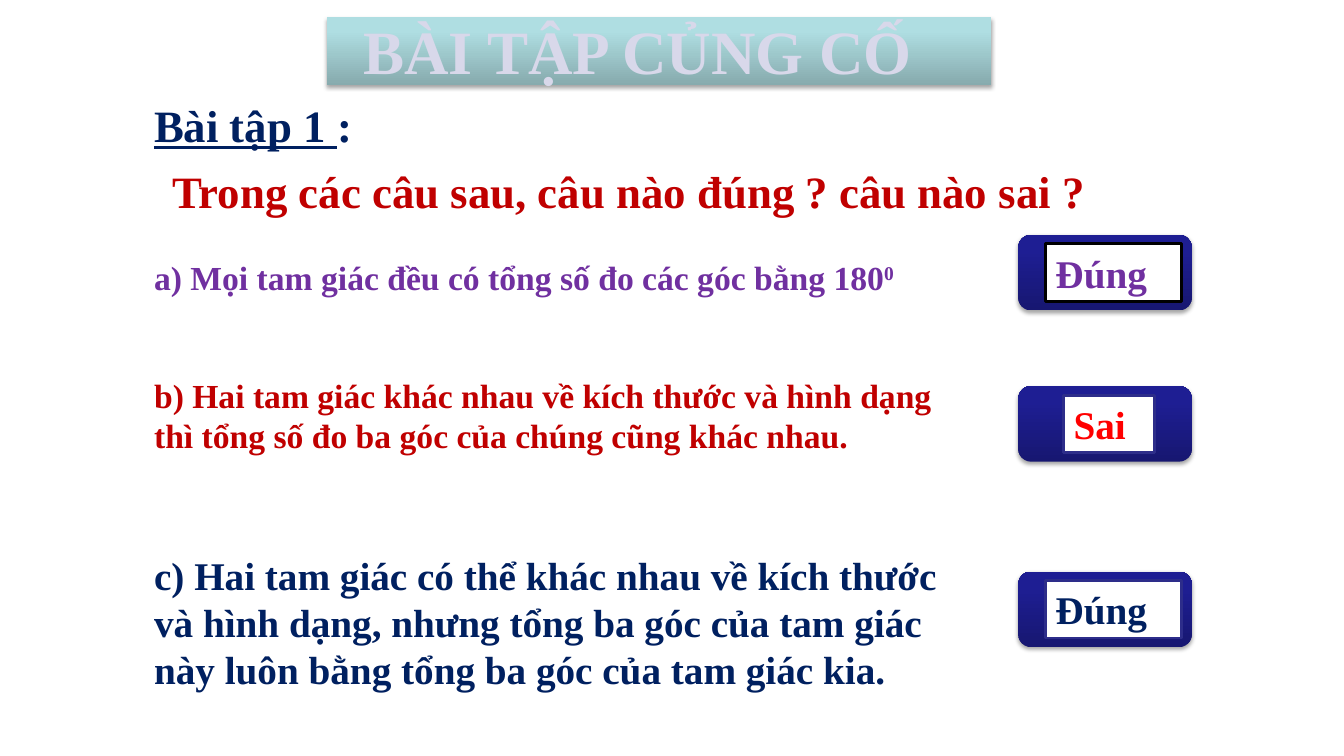
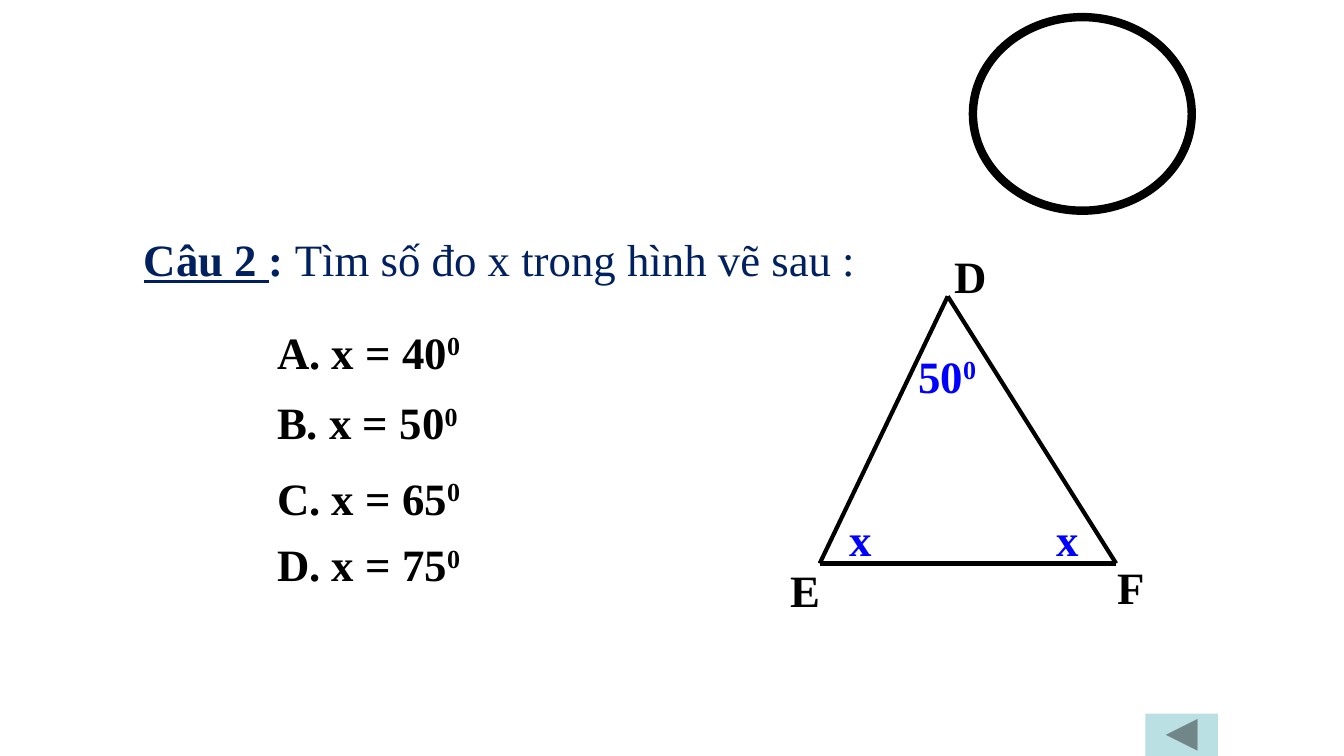
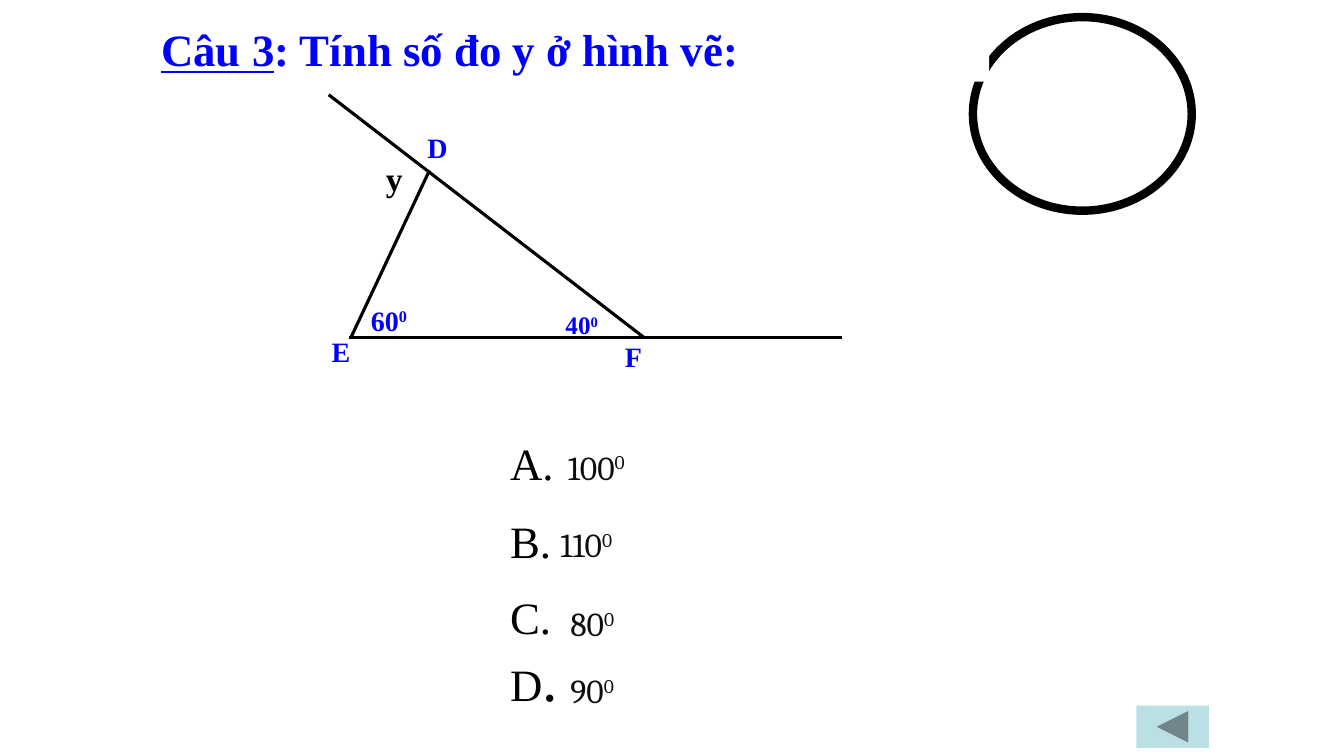
from dataclasses import dataclass

from lxml import etree
from pptx import Presentation
from pptx.dml.color import RGBColor
from pptx.enum.shapes import MSO_CONNECTOR, MSO_SHAPE
from pptx.enum.text import MSO_ANCHOR, MSO_AUTO_SIZE, PP_ALIGN
from pptx.oxml.ns import qn
from pptx.util import Inches, Pt

RECT = MSO_SHAPE.RECTANGLE
ROUND = MSO_SHAPE.ROUNDED_RECTANGLE
OVAL = MSO_SHAPE.OVAL
BACK = MSO_SHAPE.ACTION_BUTTON_BACK_OR_PREVIOUS
STRAIGHT = MSO_CONNECTOR.STRAIGHT
LEFT, CENTER = PP_ALIGN.LEFT, PP_ALIGN.CENTER
TOP = MSO_ANCHOR.TOP
GROW = MSO_AUTO_SIZE.SHAPE_TO_FIT_TEXT

SERIF, BOOK = "Times New Roman", "Cambria"
COLORS = {
    "white": "FFFFFF", "black": "000000", "ink": "0D0D0D", "navy": "002060",
    "crimson": "C00000", "red": "FF0000", "purple": "7030A0", "blue": "0000FF",
    "indigo": "2D2D8A", "pale": "D8D8EA", "aqua": "BBE0E3",
    "teal_low": "87ABAE", "teal_top": "AFDEE2",
    "plate_low": "171771", "plate_top": "1E1E93",
}


@dataclass(frozen=True)
class Bit:
    text: str
    up: bool = False
    under: bool = False
    bold: bool | None = None
    size: float | None = None


@dataclass(frozen=True)
class Box:
    x: float
    y: float
    w: float
    h: float


@dataclass(frozen=True)
class Label:
    box: Box
    bits: tuple[Bit, ...]
    size: float = 32
    color: str = "black"
    bold: bool = True
    face: str = SERIF
    align: PP_ALIGN = LEFT
    wrap: bool = True


@dataclass(frozen=True)
class Answer:
    y: float
    text: str
    color: str
    edge: str
    x: float
    w: float


def tint(name: str) -> RGBColor:
    return RGBColor.from_string(COLORS[name])


def plain(text: str) -> tuple[Bit, ...]:
    return (Bit(text),)


def power(text: str) -> tuple[Bit, ...]:
    return (Bit(text), Bit("0", up=True))


def spread(box: Box) -> list[Inches]:
    return [Inches(v) for v in (box.x, box.y, box.w, box.h)]


def write(shape, label: Label) -> None:
    frame = shape.text_frame
    frame.word_wrap = label.wrap
    frame.auto_size = GROW
    frame.vertical_anchor = TOP
    para = frame.paragraphs[0]
    para.alignment = label.align
    for bit in label.bits:
        run = para.add_run()
        run.text = bit.text
        font = run.font
        font.name = label.face
        font.size = Pt(bit.size or label.size)
        font.bold = label.bold if bit.bold is None else bit.bold
        font.underline = bit.under
        font.color.rgb = tint(label.color)
        if bit.up:
            run._r.get_or_add_rPr().set("baseline", "30000")


def note(slide, label: Label) -> None:
    write(slide.shapes.add_textbox(*spread(label.box)), label)


def block(slide, kind: MSO_SHAPE, box: Box, fill: str,
          edge: str | None = None, width: float = 1):
    shape = slide.shapes.add_shape(kind, *spread(box))
    shape.shadow.inherit = False
    shape.fill.solid()
    shape.fill.fore_color.rgb = tint(fill)
    if edge:
        shape.line.color.rgb = tint(edge)
        shape.line.width = Pt(width)
    else:
        shape.line.fill.background()
    return shape


def plate(slide, kind: MSO_SHAPE, box: Box, low: str, high: str) -> None:
    shape = block(slide, kind, box, low)
    shape.fill.gradient()
    shape.fill.gradient_angle = 90
    for stop, name, spot in zip(shape.fill.gradient_stops, (low, high), (0, 0.8)):
        stop.color.rgb = tint(name)
        stop.position = spot
    glow = shape._element.spPr.find(qn("a:effectLst"))
    cast = etree.SubElement(glow, qn("a:outerShdw"), blurRad=str(Pt(3.1)),
                            dist=str(Pt(1.8)), dir="5400000", rotWithShape="0")
    shade = etree.SubElement(cast, qn("a:srgbClr"), val=COLORS["black"])
    etree.SubElement(shade, qn("a:alpha"), val="35000")


def stroke(slide, start: tuple[float, float], end: tuple[float, float],
           width: float) -> None:
    line = slide.shapes.add_connector(
        STRAIGHT, *[Inches(v) for v in (*start, *end)])
    line.line.color.rgb = tint("black")
    line.line.width = Pt(width)
    etree.SubElement(line._element.spPr, qn("a:effectLst"))


def ring(slide) -> None:
    block(slide, OVAL, Box(9.65, 0.17, 2.17, 1.92), "white", "black", 6)


def button(slide, x: float, y: float) -> None:
    block(slide, BACK, Box(x, y, 0.72, 0.42), "aqua")


def review(slide) -> None:
    plate(slide, RECT, Box(3.24, 0.17, 6.59, 0.67), "teal_low", "teal_top")
    labels = (
        Label(Box(3.48, 0.08, 5.69, 0.84), plain("BÀI TẬP CỦNG CỐ"), 44, "pale",
              align=CENTER, wrap=False),
        Label(Box(1.43, 0.92, 2.35, 0.64),
              (Bit("Bài tập 1 ", under=True), Bit(":")), color="navy"),
        Label(Box(1.61, 1.58, 10.11, 0.64),
              plain("Trong các câu sau, câu nào đúng ? câu nào sai ?"),
              color="crimson"),
        Label(Box(1.43, 2.5, 8.4, 0.51),
              power("a) Mọi tam giác đều có tổng số đo các góc bằng 180"),
              24, "purple"),
        Label(Box(1.43, 3.67, 8.12, 0.91),
              plain("b) Hai tam giác khác nhau về kích thước và hình dạng "
                    "thì tổng số đo ba góc của chúng cũng khác nhau."),
              24, "crimson"),
        Label(Box(1.43, 5.42, 8.31, 1.51),
              plain("c) Hai tam giác có thể khác nhau về kích thước và hình "
                    "dạng, nhưng tổng ba góc của tam giác này luôn bằng tổng "
                    "ba góc của tam giác kia."),
              28, "navy"),
    )
    for label in labels:
        note(slide, label)
    answers = (
        Answer(2.33, "Đúng", "purple", "black", 10.37, 1.35),
        Answer(3.83, "Sai", "red", "indigo", 10.55, 0.9),
        Answer(5.67, "Đúng", "navy", "indigo", 10.37, 1.35),
    )
    for item in answers:
        plate(slide, ROUND, Box(10.1, item.y, 1.72, 0.75), "plate_low", "plate_top")
        box = Box(item.x, item.y + 0.09, item.w, 0.57)
        card = block(slide, RECT, box, "white", item.edge, 2)
        write(card, Label(box, plain(item.text), 28, item.color))


def second(slide) -> None:
    button(slide, 11.36, 7.08)
    ring(slide)
    peak, left, right = (9.4, 2.94), (8.13, 5.59), (11.07, 5.59)
    for start, end in ((left, right), (peak, left), (peak, right)):
        stroke(slide, start, end, 3)
    for x, y, text in ((9.37, 2.42, "D"), (10.99, 5.5, "F"), (7.74, 5.53, "E")):
        note(slide, Label(Box(x, y, 1.17, 0.64), plain(text)))
    note(slide, Label(Box(9.01, 3.41, 1.03, 0.64), power("50"), color="blue"))
    for x in (8.33, 10.38):
        note(slide, Label(Box(x, 5.03, 0.49, 0.64), plain("x"), color="blue"))
    for y, text in ((3.17, "A. x = 40"), (3.87, "B. x = 50"),
                    (4.62, "C. x = 65"), (5.28, "D. x = 75")):
        note(slide, Label(Box(2.65, y, 2.84, 0.63), power(text)))
    note(slide, Label(Box(1.33, 2.25, 8.76, 0.64),
                      (Bit("Câu 2 ", under=True), Bit(": "),
                       Bit("Tìm số đo x trong hình vẽ sau :", bold=False)),
                      color="navy"))


def third(slide) -> None:
    ring(slide)
    button(slide, 11.27, 7)
    box = Box(1.5, 0.17, 8.31, 0.64)
    write(block(slide, RECT, box, "white"),
          Label(box, (Bit("Câu 3", under=True), Bit(": Tính số đo y ở hình vẽ:")),
                color="blue"))
    for start, end in (((3.46, 3.35), (8.35, 3.35)), ((3.48, 3.35), (4.26, 1.69)),
                       ((3.26, 0.94), (6.39, 3.35))):
        stroke(slide, start, end, 2.25)
    for x, y, bits, size in ((4.14, 1.25, plain("D"), 20),
                             (3.58, 2.96, power("60"), 20),
                             (5.51, 3.02, power("40"), 18),
                             (6.1, 3.32, plain("F"), 20),
                             (3.19, 3.27, plain("E"), 20)):
        note(slide, Label(Box(x, y, 1.08, 0.43), bits, size, "blue"))
    note(slide, Label(Box(3.73, 1.52, 0.78, 0.5), plain("y"), 24))
    rows = (
        (4.27, 0.64, plain("A."), 5.46, 4.38, " 100"),
        (5.05, 0.64, plain("B."), 5.46, 5.15, "110"),
        (5.8, 0.64, plain("C."), 5.56, 5.93, "80"),
        (6.3, 0.83, (Bit("D"), Bit(".", size=44)), 5.56, 6.6, "90"),
    )
    for y, h, mark, x, base, value in rows:
        note(slide, Label(Box(4.96, y, 0.98, h), mark, bold=False))
        note(slide, Label(Box(x, base, 1.86, 0.5), power(value), 24, "ink",
                          False, BOOK))


def main() -> None:
    deck = Presentation()
    deck.slide_width, deck.slide_height = Inches(13.33), Inches(7.5)
    for draw in (review, second, third):
        draw(deck.slides.add_slide(deck.slide_layouts[6]))
    deck.save("out.pptx")


if __name__ == "__main__":
    main()
